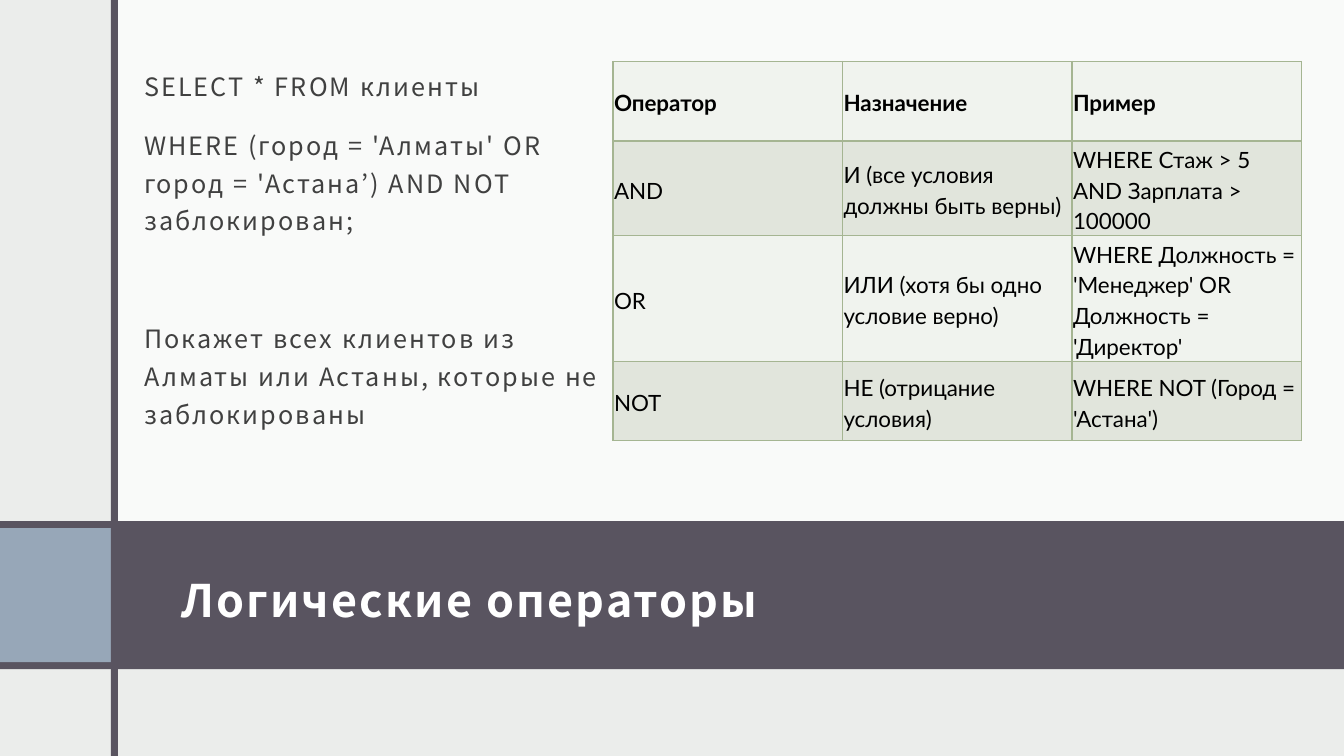
from dataclasses import dataclass
from typing import Any

from lxml.etree import SubElement
from pptx import Presentation
from pptx.dml.color import RGBColor
from pptx.enum.shapes import MSO_SHAPE
from pptx.enum.text import MSO_ANCHOR
from pptx.oxml.ns import qn
from pptx.util import Inches, Pt

COLORS = {
    "background": "EBEDEB",
    "panel": "FFFFFF",
    "band": "595460",
    "accent": "97A7B8",
    "title": "FFFFFF",
    "query": "404040",
    "cell_text": "000000",
    "border": "A5B592",
    "row_light": "F0F3EE",
    "row_dark": "E1E5DC",
}
HEADING_FONT = "Noto Sans CJK JP"
TABLE_FONT = "Lato"


@dataclass(frozen=True)
class Block:
    left: float
    top: float
    width: float
    height: float
    color: str
    opacity: int = 100


@dataclass(frozen=True)
class Line:
    text: str
    before: float = 9.3


@dataclass(frozen=True)
class OperatorRow:
    cells: tuple[str, str, str]
    height: float


BLOCKS = [
    Block(1.14, 0, 12.2, 5.17, "panel", 75),
    Block(0, 5.17, 13.33, 1.47, "band"),
    Block(0, 5.24, 1.1, 1.33, "accent"),
    Block(1.1, 0, 0.07, 7.5, "band"),
]
QUERY_LINES = [
    Line("SELECT * FROM клиенты"),
    Line("WHERE (город = 'Алматы' OR город = 'Астана’) AND NOT заблокирован;"),
    Line("Покажет всех клиентов из Алматы или Астаны, которые не заблокированы", 51),
]
OPERATOR_ROWS = [
    OperatorRow(("Оператор", "Назначение", "Пример"), 0.79),
    OperatorRow(("AND", "И (все условия должны быть верны)",
                 "WHERE Стаж > 5 AND Зарплата > 100000"), 0.92),
    OperatorRow(("OR", "ИЛИ (хотя бы одно условие верно)",
                 "WHERE Должность = 'Менеджер' OR Должность = 'Директор'"), 1.24),
    OperatorRow(("NOT", "НЕ (отрицание условия)",
                 "WHERE NOT (Город = 'Астана')"), 0.79),
]


def rgb(name: str) -> RGBColor:
    return RGBColor.from_string(COLORS[name])


def write_text(paragraph: Any, text: str, *, font: str, size: float, color: str,
               bold: bool = False, tracking: float = 0, line: float = 1,
               before: float = 0, after: float = 0) -> None:
    paragraph.line_spacing = line
    paragraph.space_before = Pt(before)
    paragraph.space_after = Pt(after)
    run = paragraph.add_run()
    run.text = text
    run.font.name = font
    run.font.size = Pt(size)
    run.font.bold = bold
    run.font.color.rgb = rgb(color)
    properties = run.font._element
    if tracking:
        properties.set("spc", str(round(tracking * 100)))
    for script in ("a:ea", "a:cs"):
        SubElement(properties, qn(script), typeface=font)


def set_margins(holder: Any, left: float, top: float, right: float, bottom: float) -> None:
    holder.margin_left = Inches(left)
    holder.margin_top = Inches(top)
    holder.margin_right = Inches(right)
    holder.margin_bottom = Inches(bottom)


def draw_block(slide: Any, block: Block) -> None:
    rectangle = slide.shapes.add_shape(
        MSO_SHAPE.RECTANGLE, Inches(block.left), Inches(block.top),
        Inches(block.width), Inches(block.height))
    rectangle.shadow.inherit = False
    rectangle.line.fill.background()
    rectangle.fill.solid()
    rectangle.fill.fore_color.rgb = rgb(block.color)
    if block.opacity < 100:
        tint = rectangle._element.spPr.find(qn("a:solidFill"))[0]
        SubElement(tint, qn("a:alpha"), val=str(block.opacity * 1000))


def draw_title(slide: Any) -> None:
    title = slide.shapes.add_textbox(
        Inches(1.68), Inches(5.33), Inches(10.95), Inches(1.13)).text_frame
    title.word_wrap = True
    title.vertical_anchor = MSO_ANCHOR.MIDDLE
    set_margins(title, 0.12, 0.2, 0.12, 0.1)
    write_text(title.paragraphs[0], "Логические операторы", font=HEADING_FONT,
               size=32, color="title", bold=True, tracking=1.5)


def draw_query(slide: Any) -> None:
    query = slide.shapes.add_textbox(
        Inches(1.31), Inches(0.51), Inches(4.77), Inches(4.23)).text_frame
    query.word_wrap = True
    set_margins(query, 0.12, 0.12, 0.12, 0.1)
    for index, entry in enumerate(QUERY_LINES):
        paragraph = query.add_paragraph() if index else query.paragraphs[0]
        write_text(paragraph, entry.text, font=HEADING_FONT, size=18, color="query",
                   tracking=1.5, line=1.25, before=entry.before, after=6)


def add_borders(cell: Any) -> None:
    properties = cell._tc.get_or_add_tcPr()
    for position, side in enumerate(("a:lnL", "a:lnR", "a:lnT", "a:lnB")):
        border = properties.makeelement(qn(side), {"w": str(Pt(1))})
        stroke = SubElement(border, qn("a:solidFill"))
        SubElement(stroke, qn("a:srgbClr"), val=COLORS["border"])
        properties.insert(position, border)


def draw_operators(slide: Any) -> None:
    operators = slide.shapes.add_table(
        len(OPERATOR_ROWS), 3, Inches(6.08), Inches(0.61),
        Inches(6.83), Inches(sum(row.height for row in OPERATOR_ROWS))).table
    for row_index, row in enumerate(OPERATOR_ROWS):
        operators.rows[row_index].height = Inches(row.height)
        for column, text in enumerate(row.cells):
            cell = operators.cell(row_index, column)
            cell.fill.solid()
            cell.fill.fore_color.rgb = rgb("row_dark" if row_index % 2 else "row_light")
            cell.vertical_anchor = MSO_ANCHOR.MIDDLE
            set_margins(cell, 0.01, 0.01, 0.01, 0.01)
            add_borders(cell)
            write_text(cell.text_frame.paragraphs[0], text, font=TABLE_FONT, size=16,
                       color="cell_text", bold=row_index == 0, line=1.15, after=8)


def main() -> None:
    deck = Presentation()
    deck.slide_width = Inches(13.33)
    deck.slide_height = Inches(7.5)
    slide = deck.slides.add_slide(deck.slide_layouts[6])
    slide.background.fill.solid()
    slide.background.fill.fore_color.rgb = rgb("background")
    for block in BLOCKS:
        draw_block(slide, block)
    draw_title(slide)
    draw_operators(slide)
    draw_query(slide)
    deck.save("out.pptx")


if __name__ == "__main__":
    main()
